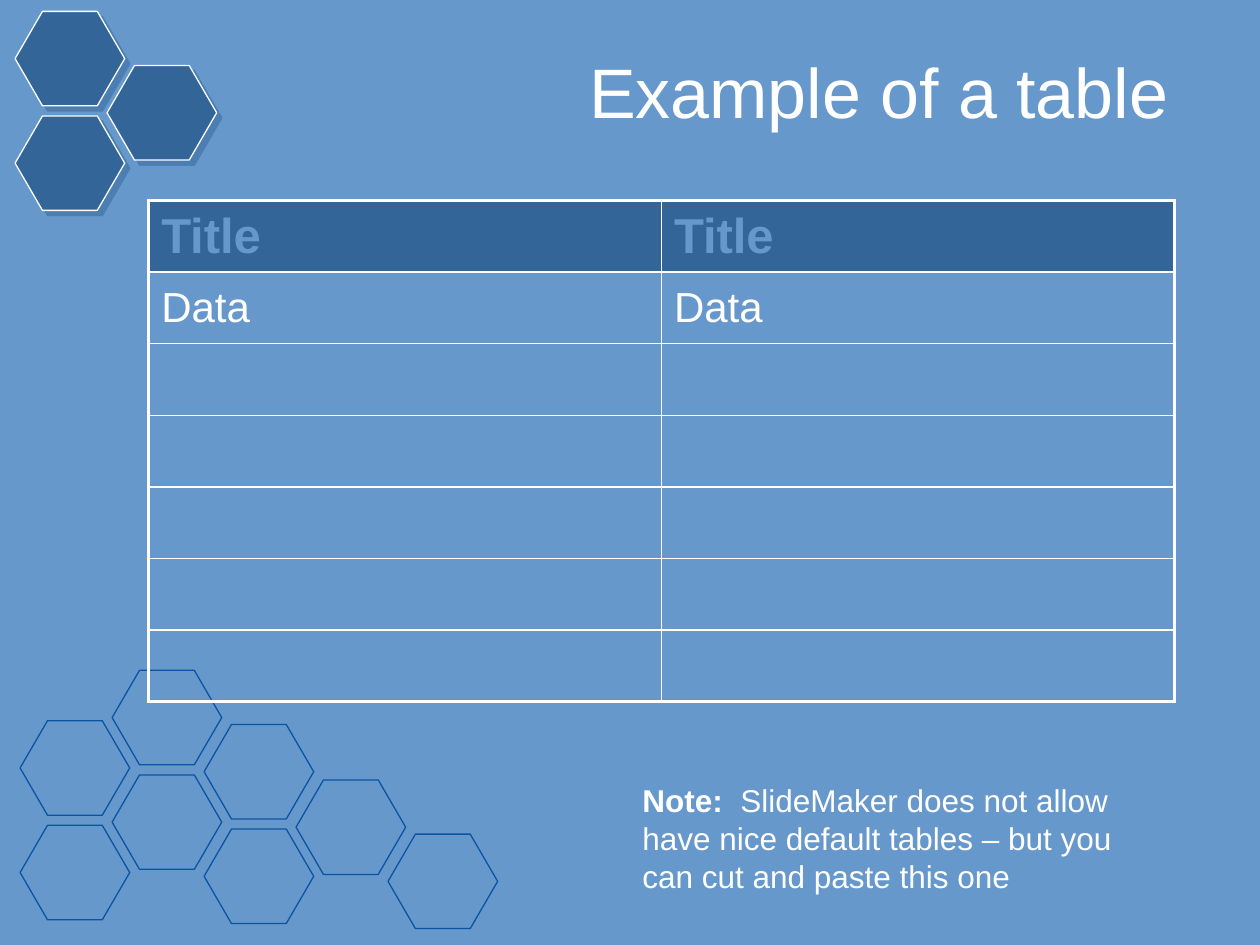
from dataclasses import dataclass

from lxml.etree import SubElement
from pptx import Presentation
from pptx.dml.color import RGBColor
from pptx.enum.shapes import MSO_SHAPE
from pptx.enum.text import MSO_ANCHOR, PP_ALIGN
from pptx.oxml.ns import qn
from pptx.util import Inches, Pt


@dataclass(frozen=True)
class Theme:
    background: str = "6698CC"
    dark: str = "336599"
    outline: str = "0B54A3"
    white: str = "FFFFFF"
    font: str = "Arial"
    title: int = 40
    header: int = 28
    data: int = 24
    note: int = 18


theme = Theme()


def style(r, size, color=theme.white, bold=False):
    r.font.name = theme.font
    r.font.size = Pt(size)
    r.font.bold = bold
    r.font.color.rgb = RGBColor.from_string(color)


def add_hexagon(left, top, line):
    s = slide.shapes.add_shape(
        MSO_SHAPE.HEXAGON, Inches(left), Inches(top), Inches(0.87), Inches(0.75)
    )
    s.adjustments[0] = 0.29
    s.shadow.inherit = False
    s.fill.background()
    s.line.color.rgb = RGBColor.from_string(line)
    s.line.width = Pt(0.75)
    return s


prs = Presentation()
prs.slide_width, prs.slide_height = Inches(10), Inches(7.5)
slide = prs.slides.add_slide(prs.slide_layouts[6])
slide.background.fill.solid()
slide.background.fill.fore_color.rgb = RGBColor.from_string(theme.background)

column_step, row_step = 0.73, 0.83
outline_columns = [(5.72, 2), (5.32, 2), (5.75, 2), (6.19, 1), (6.62, 1)]
for col, (top, count) in enumerate(outline_columns):
    for row in range(count):
        add_hexagon(0.16 + col * column_step, top + row * row_step, theme.outline)

for col, (top, count) in enumerate([(0.09, 2), (0.52, 1)]):
    for row in range(count):
        s = add_hexagon(0.12 + col * column_step, top + row * row_step, theme.white)
        s.fill.solid()
        s.fill.fore_color.rgb = RGBColor.from_string(theme.dark)
        effects = s._element.spPr.find(qn("a:effectLst"))
        shadow = SubElement(
            effects, qn("a:outerShdw"), dist=str(Pt(4.2)), dir="2700000",
            algn="ctr", rotWithShape="0",
        )
        color = SubElement(shadow, qn("a:srgbClr"), val=theme.dark)
        SubElement(color, qn("a:alpha"), val="50000")

title = slide.shapes.add_textbox(Inches(1.85), Inches(0.28), Inches(7.52), Inches(0.87))
tf = title.text_frame
tf.word_wrap = True
tf.vertical_anchor = MSO_ANCHOR.MIDDLE
p = tf.paragraphs[0]
p.text = "Example of a table"
p.alignment = PP_ALIGN.RIGHT
style(p.runs[0], theme.title)

rows, cols = 7, 2
table = slide.shapes.add_table(
    rows, cols, Inches(1.18), Inches(1.59), Inches(8.14), Inches(3.98)
).table
texts = [["Title", "Title"], ["Data", "Data"]]
for row in range(rows):
    for col in range(cols):
        cell = table.cell(row, col)
        cell.vertical_anchor = MSO_ANCHOR.MIDDLE
        edges = {
            "a:lnL": col == 0,
            "a:lnR": col == cols - 1,
            "a:lnT": row == 0,
            "a:lnB": row == rows - 1,
        }
        for tag, outer in edges.items():
            width = Pt(2.25 if outer else 1)
            border = SubElement(cell._tc.get_or_add_tcPr(), qn(tag), w=str(width))
            fill = SubElement(border, qn("a:solidFill"))
            SubElement(fill, qn("a:srgbClr"), val=theme.white)
        if row == 0:
            cell.fill.solid()
            cell.fill.fore_color.rgb = RGBColor.from_string(theme.dark)
        else:
            cell.fill.background()
        if row < len(texts):
            cell.text_frame.text = texts[row][col]
            r = cell.text_frame.paragraphs[0].runs[0]
            if row == 0:
                style(r, theme.header, theme.background, bold=True)
            else:
                style(r, theme.data)

note = slide.shapes.add_textbox(Inches(5), Inches(6.15), Inches(4.21), Inches(1))
tf = note.text_frame
tf.word_wrap = True
p = tf.paragraphs[0]
note_text = "SlideMaker does not allow have nice default tables – but you can cut and paste this one"
for text, bold in [("Note:  ", True), (note_text, False)]:
    r = p.add_run()
    r.text = text
    style(r, theme.note, bold=bold)

prs.save("out.pptx")
